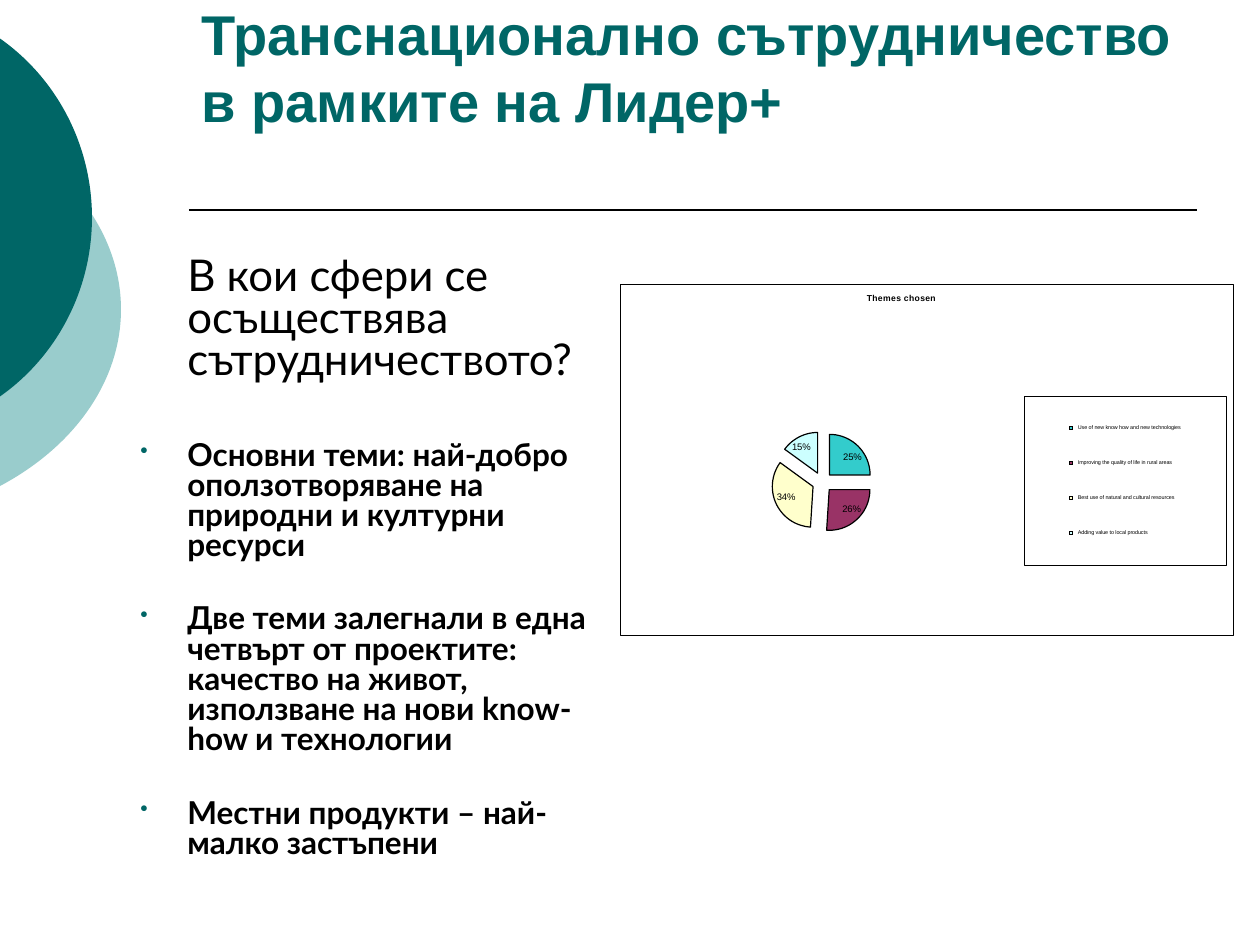
from lxml.etree import SubElement
from pptx import Presentation
from pptx.chart.data import CategoryChartData
from pptx.dml.color import RGBColor
from pptx.enum.chart import XL_CHART_TYPE, XL_LABEL_POSITION, XL_LEGEND_POSITION
from pptx.enum.shapes import MSO_CONNECTOR, MSO_SHAPE
from pptx.enum.text import MSO_ANCHOR, MSO_AUTO_SIZE, PP_ALIGN
from pptx.oxml import parse_xml
from pptx.oxml.ns import nsdecls, qn
from pptx.util import Emu, Pt

PX = 914400 // 126
COLORS = {
    "teal": "006666", "pale_teal": "99CCCC", "black": "000000", "white": "FFFFFF",
    "turquoise": "33CCCC", "plum": "993366", "cream": "FFFFCC", "ice": "CCFFFF",
}
TITLE = "Транснационално сътрудничество в рамките на Лидер+"
QUESTION = "В кои сфери се осъществява сътрудничеството?"
BULLETS = [
    ("Основни теми: най-добро оползотворяване на природни и културни ресурси", 33),
    ("Две теми залегнали в една четвърт от проектите: качество на живот, "
     "използване на нови know-how и технологии", 24.5),
    ("Местни продукти – най-малко застъпени", 24.5),
]
THEMES = [
    ("Use of new know how and new technologies", 25, "turquoise"),
    ("Improving the quality of life in rural areas", 26, "plum"),
    ("Best use of natural and cultural resources", 34, "cream"),
    ("Adding value to local products", 15, "ice"),
]
DISCS = [
    ("pale_teal", (-446, 94, 567, 431)),
    ("teal", (-334, 0, 426, 435)),
]


def px(*lengths):
    return [Emu(length * PX) for length in lengths]


def color(name):
    return RGBColor.from_string(COLORS[name])


def style_font(font, size, name="Arial", tint="black", bold=False):
    font.size, font.name, font.bold = Pt(size), name, bold
    font.color.rgb = color(tint)


def add_disc(slide, tint, box):
    disc = slide.shapes.add_shape(MSO_SHAPE.OVAL, *px(*box))
    disc.shadow.inherit = False
    disc.fill.solid()
    disc.fill.fore_color.rgb = color(tint)
    disc.line.fill.background()


def add_rule(slide):
    rule = slide.shapes.add_connector(MSO_CONNECTOR.STRAIGHT, *px(189, 210, 1197, 210))
    rule.line.color.rgb = color("black")
    rule.line.width = Pt(1)
    SubElement(rule.element.spPr, qn("a:effectLst"))


def fill_title(title):
    title.left, title.top, title.width, title.height = px(189, 42, 1008, 157)
    frame = title.text_frame
    frame.auto_size = MSO_AUTO_SIZE.NONE
    frame.word_wrap = True
    frame.vertical_anchor = MSO_ANCHOR.BOTTOM
    frame.margin_top, frame.margin_bottom = px(0, 65)
    paragraph = frame.paragraphs[0]
    paragraph.alignment = PP_ALIGN.LEFT
    paragraph.line_spacing = 1.0
    run = paragraph.add_run()
    run.text = TITLE
    style_font(run.font, 32, tint="teal", bold=True)


def add_body_paragraph(paragraph, text, size, space_before, bullet):
    paragraph.line_spacing = 0.8
    paragraph.space_before = Pt(space_before)
    run = paragraph.add_run()
    run.text = text
    style_font(run.font, size, "Lato", bold=bullet)
    properties = paragraph._p.get_or_add_pPr()
    properties.set("marL", str(47 * PX))
    properties.set("indent", str(-47 * PX if bullet else 0))
    if bullet:
        tint = SubElement(properties, qn("a:buClr"))
        SubElement(tint, qn("a:srgbClr"), val=COLORS["teal"])
        SubElement(properties, qn("a:buSzPct"), val="70000")
        SubElement(properties, qn("a:buChar"), char="•")


def add_body(slide):
    frame = slide.shapes.add_textbox(*px(128, 252, 494, 567)).text_frame
    frame.word_wrap = True
    add_body_paragraph(frame.paragraphs[0], QUESTION, 25, 5, False)
    for text, space_before in BULLETS:
        add_body_paragraph(frame.add_paragraph(), text, 18, space_before, True)


def set_layout(parent, index, inner=False, **places):
    for old in parent.findall(qn("c:layout")):
        parent.remove(old)
    layout = parse_xml(f"<c:layout {nsdecls('c')}><c:manualLayout/></c:layout>")
    manual = layout[0]
    if inner:
        SubElement(manual, qn("c:layoutTarget"), val="inner")
    for axis in ("x", "y"):
        SubElement(manual, qn(f"c:{axis}Mode"), val="edge")
    for key, value in places.items():
        SubElement(manual, qn(f"c:{key}"), val=str(value))
    parent.insert(index, layout)


def framed_box():
    return parse_xml(
        f"<c:spPr {nsdecls('c', 'a')}>"
        f"<a:solidFill><a:srgbClr val='{COLORS['white']}'/></a:solidFill>"
        f"<a:ln w='2159'><a:solidFill><a:srgbClr val='{COLORS['black']}'/></a:solidFill></a:ln>"
        "</c:spPr>")


def add_themes_chart(slide):
    data = CategoryChartData()
    data.categories = [name for name, _, _ in THEMES]
    data.add_series("Series 1", [value for _, value, _ in THEMES])
    chart = slide.shapes.add_chart(XL_CHART_TYPE.PIE, *px(620, 284, 613, 351), data).chart
    style_font(chart.font, 3.4)
    chart.has_title = True
    run = chart.chart_title.text_frame.paragraphs[0].add_run()
    run.text = "Themes chosen"
    style_font(run.font, 4.9, bold=True)

    chart.has_legend = True
    chart.legend.position = XL_LEGEND_POSITION.RIGHT
    chart.legend.include_in_layout = False
    style_font(chart.legend.font, 3.1)

    plot = chart.plots[0]
    plot.vary_by_categories = True
    series = plot.series[0]
    series.format.line.color.rgb = color("black")
    series.format.line.width = Pt(0.67)
    for index, (_, _, tint) in enumerate(THEMES):
        part = series.points[index].format
        part.fill.solid()
        part.fill.fore_color.rgb = color(tint)
        part.line.color.rgb = color("black")
        part.line.width = Pt(0.67)
    labels = series.data_labels
    labels.show_percentage = True
    labels.show_value = False
    labels.number_format = "0%"
    labels.number_format_is_linked = False
    labels.position = XL_LABEL_POSITION.BEST_FIT
    style_font(labels.font, 5.4)

    root = chart.element.find(qn("c:chart"))
    explosion = parse_xml(f"<c:explosion {nsdecls('c')} val='25'/>")
    root.find(".//" + qn("c:ser")).find(qn("c:spPr")).addnext(explosion)
    set_layout(root.find(qn("c:title")), 1, x=0.4, y=0.02)
    set_layout(root.find(qn("c:plotArea")), 0, True, x=0.14, y=0.42, w=0.38, h=0.29)
    legend = root.find(qn("c:legend"))
    set_layout(legend, 1, x=0.66, y=0.32, w=0.33, h=0.48)
    legend.find(qn("c:overlay")).addnext(framed_box())
    root.addnext(framed_box())


def main():
    presentation = Presentation()
    presentation.slide_width, presentation.slide_height = px(1260, 945)
    slide = presentation.slides.add_slide(presentation.slide_layouts[5])
    for tint, box in DISCS:
        add_disc(slide, tint, box)
    add_rule(slide)
    fill_title(slide.shapes.title)
    add_body(slide)
    add_themes_chart(slide)
    presentation.save("out.pptx")


if __name__ == "__main__":
    main()
